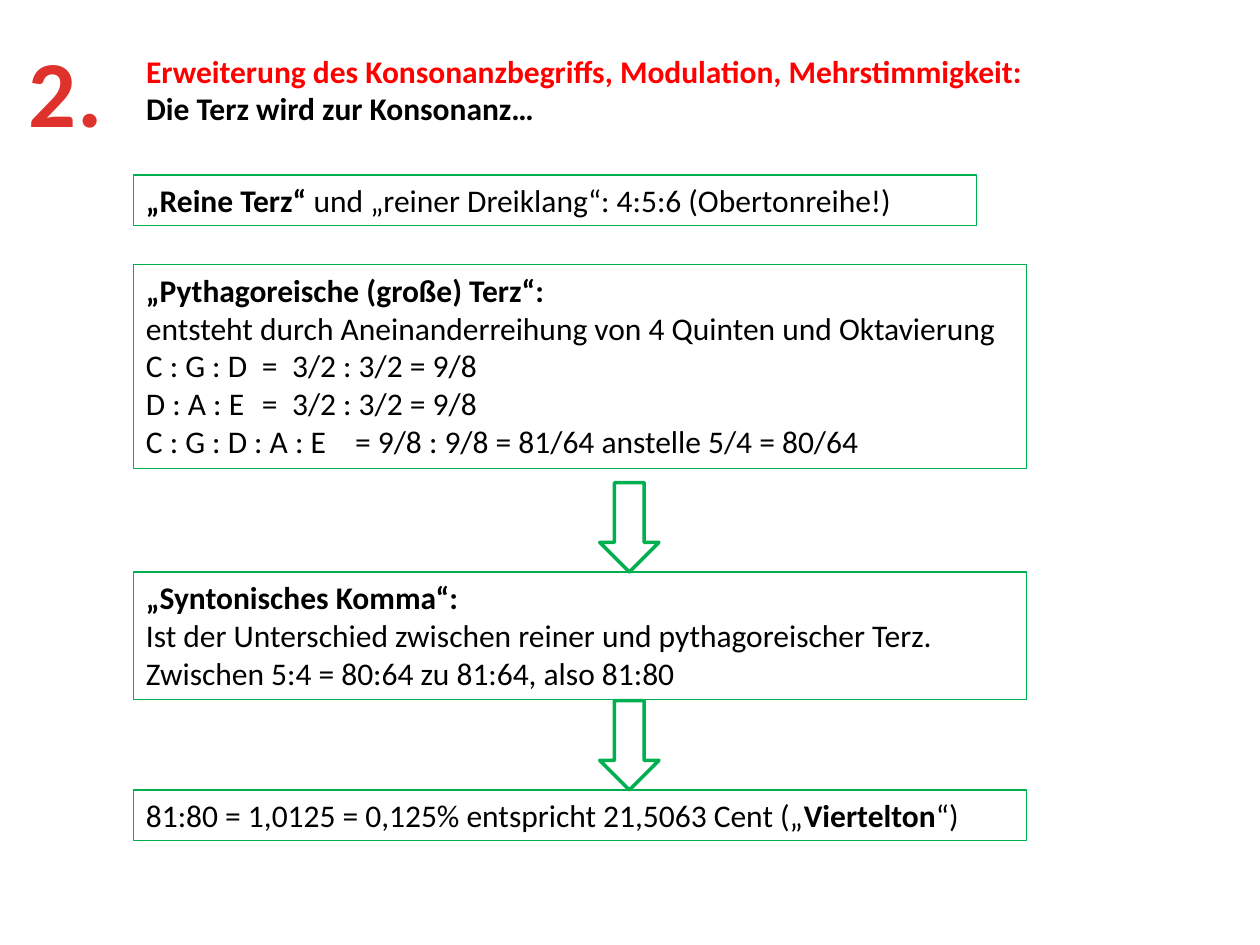
"""Build the slide on the pure third and the syntonic comma."""
from dataclasses import dataclass

from pptx import Presentation
from pptx.dml.color import RGBColor
from pptx.enum.shapes import MSO_SHAPE as Shape
from pptx.enum.text import MSO_ANCHOR as Anchor, MSO_AUTO_SIZE as Fit, PP_ALIGN as Align
from pptx.oxml.ns import qn
from pptx.util import Inches, Pt

GREEN = RGBColor(0x00, 0xB0, 0x50)
RED = RGBColor(0xFF, 0x00, 0x00)
BRICK = RGBColor(0xE0, 0x32, 0x2D)
BLACK = RGBColor(0x00, 0x00, 0x00)
WHITE = RGBColor(0xFF, 0xFF, 0xFF)
FONT = "Calibri"
LEFT = 1.06
WIDE = 7.09
STOPS = (0.92, 1.16, 1.66)


@dataclass
class Run:
    text: str
    bold: bool = False
    color: RGBColor = BLACK
    size: int = 18


@dataclass
class Box:
    top: float
    width: float
    height: float
    lines: list[list[Run]]


BOXES = [
    Box(1.39, 6.69, 0.4, [
        [Run("„Reine Terz“ ", True), Run("und „reiner Dreiklang“: 4:5:6 (Obertonreihe!)")],
    ]),
    Box(2.1, WIDE, 1.62, [
        [Run("„Pythagoreische (große) Terz“:", True)],
        [Run("entsteht durch Aneinanderreihung von 4 Quinten und Oktavierung")],
        [Run("C : G : D\t=\t3/2 : 3/2 = 9/8")],
        [Run("D : A : E\t=\t3/2 : 3/2 = 9/8")],
        [Run("C : G : D : A : E\t= 9/8 : 9/8 = 81/64 anstelle 5/4 = 80/64")],
    ]),
    Box(4.54, WIDE, 1.01, [
        [Run("„Syntonisches Komma“:", True)],
        [Run("Ist der Unterschied zwischen reiner und pythagoreischer Terz.")],
        [Run("Zwischen 5:4 = 80:64 zu 81:64, also 81:80")],
    ]),
    Box(6.27, WIDE, 0.4, [
        [Run("81:80 = 1,0125 = 0,125% entspricht 21,5063 Cent („"),
         Run("Viertelton", True), Run("“)")],
    ]),
]
TITLE = [
    [Run("Erweiterung des Konsonanzbegriffs, Modulation, Mehrstimmigkeit:", True, RED)],
    [Run("Die Terz wird zur Konsonanz…", True)],
]
ARROWS = (3.83, 5.56)


def add_stops(para) -> None:
    tabs = para._p.get_or_add_pPr().makeelement(qn("a:tabLst"), {})
    para._p.get_or_add_pPr().append(tabs)
    for stop in STOPS:
        tab = tabs.makeelement(qn("a:tab"), {"pos": str(Inches(stop)), "algn": "l"})
        tabs.append(tab)


def write(frame, lines: list[list[Run]], align=Align.LEFT, wrap: bool = True) -> None:
    frame.word_wrap = wrap
    frame.auto_size = Fit.SHAPE_TO_FIT_TEXT
    frame.vertical_anchor = Anchor.TOP
    for i, line in enumerate(lines):
        para = frame.add_paragraph() if i else frame.paragraphs[0]
        para.alignment = align
        if any("\t" in part.text for part in line):
            add_stops(para)
        for part in line:
            run = para.add_run()
            run.text = part.text
            font = run.font
            font.name, font.size, font.bold = FONT, Pt(part.size), part.bold
            font.color.rgb = part.color


def add_box(slide, box: Box) -> None:
    shape = slide.shapes.add_textbox(
        Inches(LEFT), Inches(box.top), Inches(box.width), Inches(box.height))
    shape.line.color.rgb = GREEN
    shape.line.width = Pt(0.75)
    write(shape.text_frame, box.lines)


def add_arrow(slide, top: float) -> None:
    shape = slide.shapes.add_shape(
        Shape.DOWN_ARROW, Inches(4.76), Inches(top), Inches(0.47), Inches(0.71))
    shape.shadow.inherit = False
    shape.fill.solid()
    shape.fill.fore_color.rgb = WHITE
    shape.line.color.rgb = GREEN
    shape.line.width = Pt(2)


def add_title(slide) -> None:
    title = slide.shapes.title
    title.left, title.top = Inches(LEFT), Inches(0.36)
    title.width, title.height = Inches(7.22), Inches(0.71)
    write(title.text_frame, TITLE, wrap=False)


def add_count(slide) -> None:
    count = slide.shapes.add_textbox(
        Inches(0.12), Inches(0.21), Inches(0.8), Inches(1.01))
    write(count.text_frame, [[Run("2.", True, BRICK, 54)]], Align.CENTER, False)
    count.text_frame.paragraphs[0].runs[0].font._element.set("spc", "50")


def main() -> None:
    deck = Presentation()
    deck.slide_width, deck.slide_height = Inches(10), Inches(7.5)
    slide = deck.slides.add_slide(deck.slide_layouts[5])
    add_title(slide)
    for box in BOXES:
        add_box(slide, box)
    for top in ARROWS:
        add_arrow(slide, top)
    add_count(slide)
    deck.save("out.pptx")


if __name__ == "__main__":
    main()
